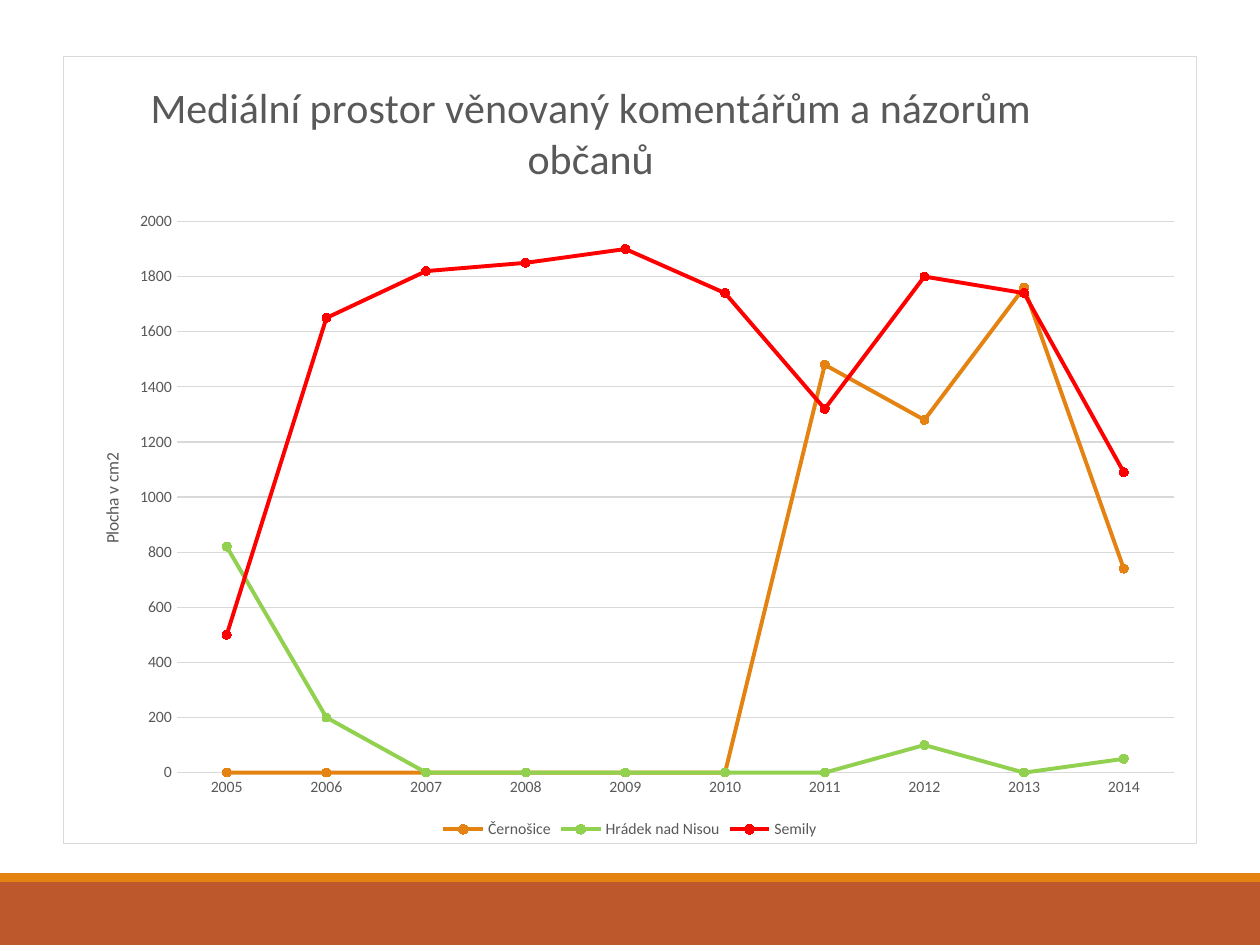
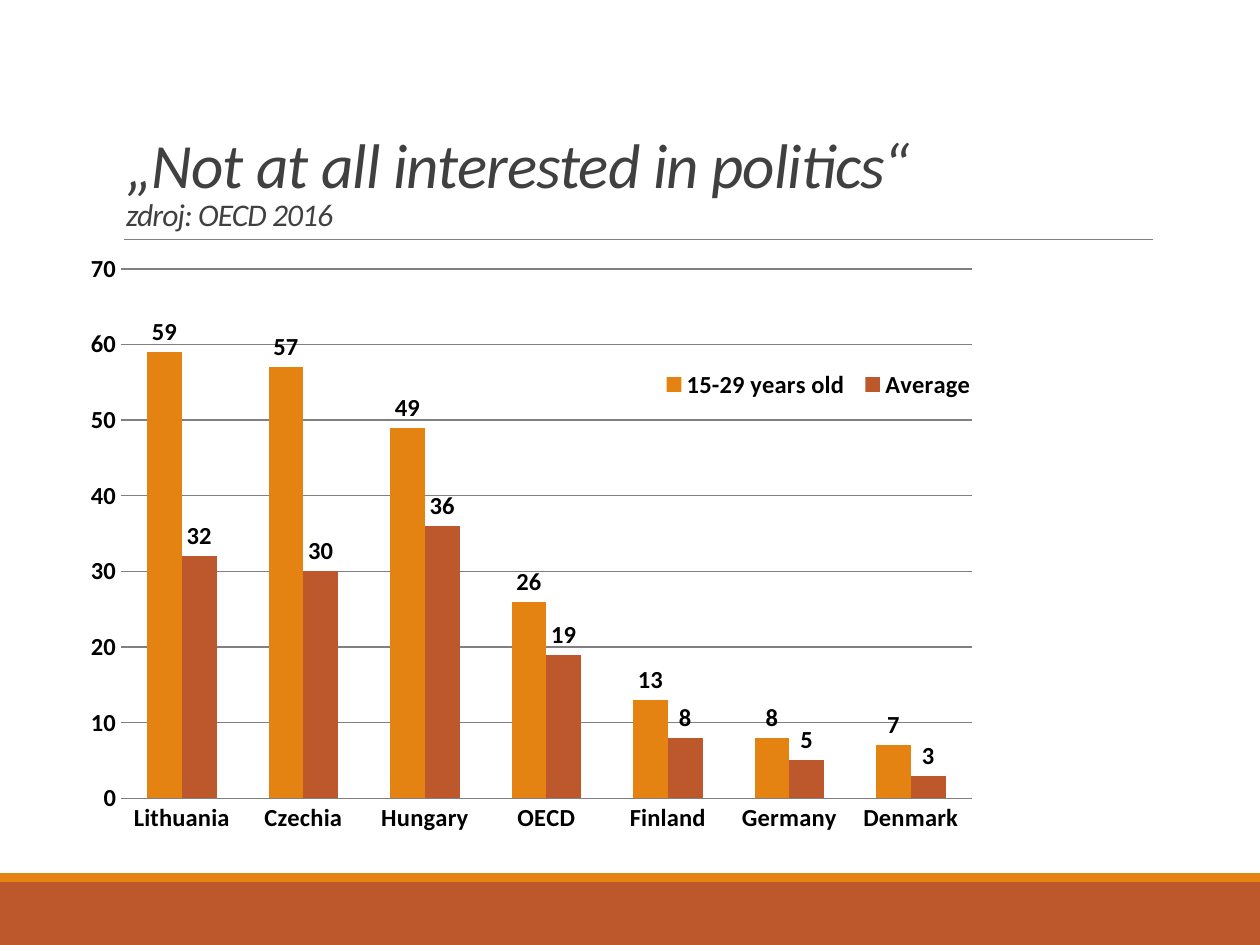
"""Builds two slides on local media space and interest in politics."""
from dataclasses import dataclass
from typing import Any, NamedTuple

from lxml import etree
from pptx import Presentation
from pptx.chart.chart import Chart
from pptx.chart.data import CategoryChartData
from pptx.dml.color import RGBColor
from pptx.enum.chart import (XL_CHART_TYPE, XL_LABEL_POSITION, XL_LEGEND_POSITION,
                             XL_MARKER_STYLE, XL_TICK_MARK)
from pptx.enum.shapes import MSO_CONNECTOR, MSO_SHAPE
from pptx.enum.text import MSO_ANCHOR, MSO_AUTO_SIZE, PP_ALIGN
from pptx.oxml.ns import qn
from pptx.slide import Slide
from pptx.util import Cm, Pt

LINE, COLUMN = XL_CHART_TYPE.LINE_MARKERS, XL_CHART_TYPE.COLUMN_CLUSTERED
BOTTOM, RIGHT = XL_LEGEND_POSITION.BOTTOM, XL_LEGEND_POSITION.RIGHT
NO_TICK, OUTSIDE = XL_TICK_MARK.NONE, XL_LABEL_POSITION.OUTSIDE_END
CIRCLE, RECTANGLE = XL_MARKER_STYLE.CIRCLE, MSO_SHAPE.RECTANGLE
STRAIGHT = MSO_CONNECTOR.STRAIGHT
ANCHOR_BOTTOM, FIXED_SIZE = MSO_ANCHOR.BOTTOM, MSO_AUTO_SIZE.NONE
ALIGN_LEFT = PP_ALIGN.LEFT
TITLE_ONLY, BLANK = 5, 6


@dataclass(frozen=True)
class Theme:
    font: str = "Calibri"
    orange: str = "E48312"
    rust: str = "BD582C"
    green: str = "92D050"
    red: str = "FF0000"
    white: str = "FFFFFF"
    black: str = "000000"
    heading: str = "404040"
    muted: str = "595959"
    rule: str = "808080"
    pale: str = "D9D9D9"
    title_size: float = 36
    source_size: float = 18
    chart_title_size: float = 24
    axis_title_size: float = 10
    small_size: float = 9
    label_size: float = 14


THEME = Theme()


class Box(NamedTuple):
    left: float
    top: float
    width: float
    height: float

    def lengths(self) -> list[Cm]:
        return [Cm(value) for value in self]


class Band(NamedTuple):
    box: Box
    color: str


class Series(NamedTuple):
    name: str
    values: tuple[int, ...]
    color: str


@dataclass(frozen=True)
class ChartPlan:
    kind: Any
    box: Box
    categories: tuple[str, ...]
    series: tuple[Series, ...]
    maximum: int
    step: int
    grid: str
    font: dict[str, Any]
    legend_position: Any
    layouts: dict[str, tuple[float, ...]]


BANDS = (Band(Box(0, 17.78, 25.4, 1.27), THEME.rust),
         Band(Box(0, 17.6, 25.4, 0.18), THEME.orange))

MEDIA_SPACE = ChartPlan(
    LINE, Box(1.27, 1.12, 22.86, 15.9),
    tuple(str(year) for year in range(2005, 2015)),
    (Series("Černošice", (0, 0, 0, 0, 0, 0, 1480, 1280, 1760, 740), THEME.orange),
     Series("Hrádek nad Nisou", (820, 200, 0, 0, 0, 0, 0, 100, 0, 50), THEME.green),
     Series("Semily", (500, 1650, 1820, 1850, 1900, 1740, 1320, 1800, 1740, 1090),
            THEME.red)),
    2000, 200, THEME.pale,
    {"size": Pt(THEME.small_size), "bold": False, "color": THEME.muted},
    BOTTOM,
    {"c:chart/c:plotArea": (0.1, 0.21, 0.88, 0.7),
     "c:chart/c:title": (0.07, 0.02),
     "c:chart/c:plotArea/c:valAx/c:title": (0.03, 0.5)})

DISINTEREST = ChartPlan(
    COLUMN, Box(1.3, 4.93, 22.86, 12.27),
    ("Lithuania", "Czechia", "Hungary", "OECD", "Finland", "Germany", "Denmark"),
    (Series("15-29 years old", (59, 57, 49, 26, 13, 8, 7), THEME.orange),
     Series("Average", (32, 30, 36, 19, 8, 5, 3), THEME.rust)),
    70, 10, THEME.rule,
    {"size": Pt(THEME.label_size), "bold": True, "color": THEME.black},
    RIGHT,
    {"c:chart/c:plotArea": (0.05, 0.04, 0.75, 0.87),
     "c:chart/c:legend": (0.52, 0.2, 0.29, 0.06)})


def rgb(color: str) -> RGBColor:
    return RGBColor.from_string(color)


def set_all(target: Any, values: dict[str, Any]) -> None:
    for name, value in values.items():
        setattr(target, name, value)


def style_font(font: Any, color: str, **values: Any) -> None:
    set_all(font, {"name": THEME.font, **values})
    font.color.rgb = rgb(color)


def paint(fill: Any, color: str) -> None:
    fill.solid()
    fill.fore_color.rgb = rgb(color)


def stroke(line: Any, color: str, width: float) -> None:
    line.color.rgb = rgb(color)
    line.width = Pt(width)


def draw_bands(slide: Slide) -> None:
    for band in BANDS:
        strip = slide.shapes.add_shape(RECTANGLE, *band.box.lengths())
        strip.shadow.inherit = False
        paint(strip.fill, band.color)
        strip.line.fill.background()


def draw_rule(slide: Slide) -> None:
    rule = slide.shapes.add_connector(STRAIGHT, Cm(2.49), Cm(4.83), Cm(23.24), Cm(4.83))
    stroke(rule.line, THEME.rule, 0.5)
    etree.SubElement(rule.element.find(qn("p:spPr")), qn("a:effectLst"))


def write_title(slide: Slide, heading: str, source: str) -> None:
    title = slide.shapes.title
    set_all(title, dict(zip(("left", "top", "width", "height"),
                            Box(2.29, 0.79, 20.96, 4.04).lengths())))
    frame = title.text_frame
    set_all(frame, {"word_wrap": True, "auto_size": FIXED_SIZE,
                    "vertical_anchor": ANCHOR_BOTTOM})
    paragraph = frame.paragraphs[0]
    set_all(paragraph, {"alignment": ALIGN_LEFT, "line_spacing": 0.85})
    heading_run = paragraph.add_run()
    paragraph.add_line_break()
    source_run = paragraph.add_run()
    for run, text, size in ((heading_run, heading, THEME.title_size),
                            (source_run, source, THEME.source_size)):
        run.text = text
        style_font(run.font, THEME.heading, size=Pt(size), italic=True)
    for properties in title.element.iter(qn("a:rPr")):
        properties.set("spc", "-50")


def place_part(part: Any, position: tuple[float, ...], inner: bool) -> None:
    layout = part.find(qn("c:layout"))
    if layout is None:
        layout = etree.Element(qn("c:layout"))
        leaders = [child for child in part if child.tag in (qn("c:tx"), qn("c:legendPos"))]
        part.insert(len(leaders), layout)
    for child in list(layout):
        layout.remove(child)
    manual = etree.SubElement(layout, qn("c:manualLayout"))
    settings = {"layoutTarget": "inner"} if inner else {}
    settings |= {"xMode": "edge", "yMode": "edge"}
    settings |= {key: str(value) for key, value in zip("xywh", position)}
    for key, value in settings.items():
        etree.SubElement(manual, qn(f"c:{key}")).set("val", value)


def frame_chart(chart: Chart) -> None:
    properties = etree.Element(qn("c:spPr"))
    chart.element.find(qn("c:chart")).addnext(properties)
    border = etree.Element(qn("a:ln"), w=str(int(Pt(0.75))))
    for parent, color in ((properties, THEME.white), (border, THEME.pale)):
        solid = etree.SubElement(parent, qn("a:solidFill"))
        etree.SubElement(solid, qn("a:srgbClr")).set("val", color)
    properties.append(border)


def add_plan(slide: Slide, plan: ChartPlan) -> Chart:
    data = CategoryChartData()
    data.categories = plan.categories
    for series in plan.series:
        data.add_series(series.name, series.values)
    chart = slide.shapes.add_chart(plan.kind, *plan.box.lengths(), data).chart
    style_font(chart.font, **plan.font)
    set_all(chart, {"has_title": False, "has_legend": True})
    set_all(chart.legend, {"position": plan.legend_position, "include_in_layout": False})
    style_font(chart.legend.font, **plan.font)
    for axis in (chart.category_axis, chart.value_axis):
        set_all(axis, {"major_tick_mark": NO_TICK, "minor_tick_mark": NO_TICK})
        style_font(axis.tick_labels.font, **plan.font)
        axis.format.line.fill.background()
    set_all(chart.value_axis, {"minimum_scale": 0, "maximum_scale": plan.maximum,
                               "major_unit": plan.step, "has_major_gridlines": True})
    stroke(chart.value_axis.major_gridlines.format.line, plan.grid, 0.75)
    chart.plots[0].vary_by_categories = False
    return chart


def place_parts(chart: Chart, plan: ChartPlan) -> None:
    for route, position in plan.layouts.items():
        place_part(chart.element.xpath(route)[0], position, route.endswith("plotArea"))


def write_chart_title(owner: Any, text: str, size: float) -> None:
    frame = owner.text_frame
    frame.text = text
    style_font(frame.paragraphs[0].runs[0].font, THEME.muted, size=Pt(size), bold=False)


def build_media_space(slide: Slide) -> None:
    draw_bands(slide)
    chart = add_plan(slide, MEDIA_SPACE)
    frame_chart(chart)
    write_chart_title(chart.chart_title, "Mediální prostor věnovaný komentářům a názorům občanů",
                      THEME.chart_title_size)
    write_chart_title(chart.value_axis.axis_title, "Plocha v cm2", THEME.axis_title_size)
    stroke(chart.category_axis.format.line, THEME.pale, 0.75)
    for town, series in zip(chart.plots[0].series, MEDIA_SPACE.series):
        town.smooth = False
        stroke(town.format.line, series.color, 2.25)
        set_all(town.marker, {"style": CIRCLE, "size": 5})
        paint(town.marker.format.fill, series.color)
        stroke(town.marker.format.line, series.color, 0.75)
    place_parts(chart, MEDIA_SPACE)


def build_disinterest(slide: Slide) -> None:
    draw_bands(slide)
    draw_rule(slide)
    write_title(slide, "„Not at all interested in politics“ ", "zdroj: OECD 2016")
    chart = add_plan(slide, DISINTEREST)
    columns = chart.plots[0]
    set_all(columns, {"gap_width": 150, "overlap": 0, "has_data_labels": True})
    set_all(columns.data_labels, {"show_value": True, "position": OUTSIDE})
    style_font(columns.data_labels.font, **DISINTEREST.font)
    for group, series in zip(columns.series, DISINTEREST.series):
        paint(group.format.fill, series.color)
    place_parts(chart, DISINTEREST)


def main() -> None:
    deck = Presentation()
    set_all(deck, {"slide_width": Cm(25.4), "slide_height": Cm(19.05)})
    for layout, build in ((BLANK, build_media_space), (TITLE_ONLY, build_disinterest)):
        build(deck.slides.add_slide(deck.slide_layouts[layout]))
    deck.save("out.pptx")


if __name__ == "__main__":
    main()
